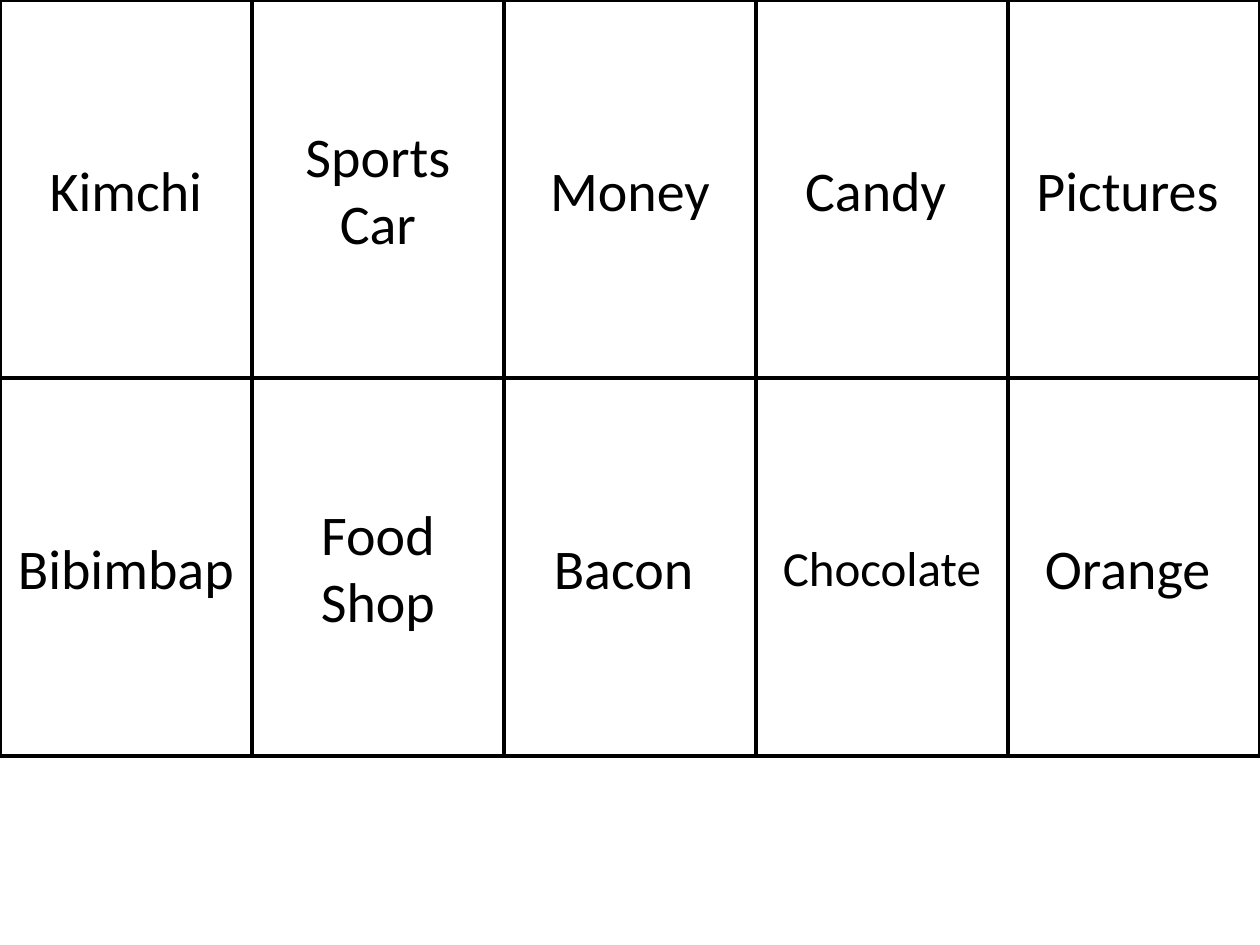
import pptx
import pptx.dml.color
import pptx.enum.shapes
import pptx.enum.text
import pptx.util
from pptx.util import Inches


def color(code):
    """Turn a hex string into a colour."""
    return pptx.dml.color.RGBColor.from_string(code)


class Board:
    """Hold the card style and the current slide."""

    font, ink, paper = "Calibri", "000000", "FFFFFF"
    wide, high = 2, 3

    def __init__(self, slide):
        """Keep the slide to draw on."""
        self.slide = slide

    def title(self, text, col, row):
        """Place the title as a card."""
        card = self.slide.shapes.title
        card.left, card.top = Inches(col * self.wide), Inches(row * self.high)
        card.width, card.height = Inches(self.wide), Inches(self.high)
        self.dress(card, text)

    def card(self, text, col, row, size=32):
        """Add a word card at a grid place."""
        card = self.slide.shapes.add_shape(
            pptx.enum.shapes.MSO_SHAPE.RECTANGLE,
            Inches(col * self.wide), Inches(row * self.high),
            Inches(self.wide), Inches(self.high))
        card.shadow.inherit = False
        self.dress(card, text, size)

    def dress(self, card, text, size=32):
        """Apply fill, line and text to a card."""
        card.fill.solid()
        card.fill.fore_color.rgb = color(self.paper)
        card.line.color.rgb = color(self.ink)
        card.line.width = pptx.util.Pt(2)
        frame = card.text_frame
        frame.text = text
        frame.word_wrap = True
        frame.auto_size = pptx.enum.text.MSO_AUTO_SIZE.NONE
        frame.vertical_anchor = pptx.enum.text.MSO_ANCHOR.MIDDLE
        line = frame.paragraphs[0]
        line.alignment = pptx.enum.text.PP_ALIGN.CENTER
        line.font.name = self.font
        line.font.size = pptx.util.Pt(size)
        line.font.color.rgb = color(self.ink)


def main():
    """Build the sheet of word cards."""
    deck = pptx.Presentation()
    deck.slide_width, deck.slide_height = Inches(10), Inches(7.5)
    board = Board(deck.slides.add_slide(deck.slide_layouts[5]))
    pairs = [
        ("Kimchi", "Bibimbap"),
        ("Sports Car", "Food Shop"),
        ("Money", "Bacon "),
        ("Candy ", "Chocolate"),
        ("Pictures ", "Orange "),
    ]
    sizes = {"Chocolate": 28}
    for col, pair in enumerate(pairs):
        for row, word in enumerate(pair):
            if col == row == 0:
                board.title(word, col, row)
            else:
                board.card(word, col, row, sizes.get(word, 32))
    deck.save("out.pptx")


if __name__ == "__main__":
    main()
